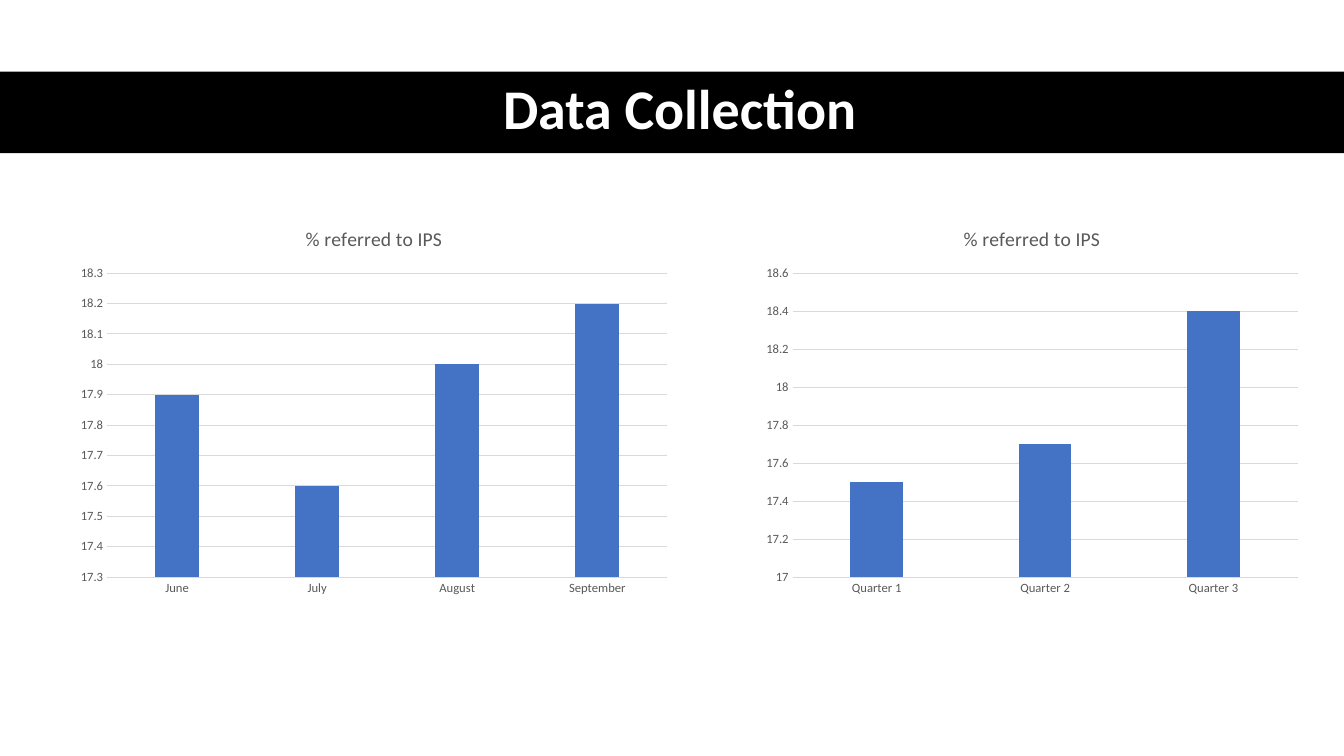
from dataclasses import dataclass

from pptx import Presentation
from pptx import util as u
from pptx.chart import data as cd
from pptx.dml.color import RGBColor
from pptx.enum import chart as ce
from pptx.enum import shapes, text

WIDTH, HEIGHT = u.Inches(13.33), u.Inches(7.5)
FONT = "Calibri"
LABEL = "% referred to IPS"
HEX = {"band": "000000", "head": "FFFFFF", "ink": "000000",
       "gray": "595959", "grid": "D9D9D9", "bar": "4472C4"}


@dataclass
class Box:
    """A place on the slide, in percent of its width and height."""
    left: float
    top: float
    width: float
    height: float

    def place(self) -> tuple[int, int, int, int]:
        return (int(WIDTH * self.left / 100), int(HEIGHT * self.top / 100),
                int(WIDTH * self.width / 100), int(HEIGHT * self.height / 100))


@dataclass
class Plot:
    box: Box
    cats: list[str]
    vals: list[float]
    low: float
    high: float
    step: float


BAND = Box(0, 9.47, 100, 10.8)
HEAD = Box(4.58, 9.33, 91.97, 10.8)
PLOTS = [
    Plot(Box(5.1, 27.6, 45.46, 52.27), ["June", "July", "August", "September"],
         [17.9, 17.6, 18, 18.2], 17.3, 18.3, 0.1),
    Plot(Box(56.19, 27.6, 41.19, 52.27), ["Quarter 1", "Quarter 2", "Quarter 3"],
         [17.5, 17.7, 18.4], 17, 18.6, 0.2),
]


def put(item, **values) -> None:
    for name, value in values.items():
        setattr(item, name, value)


def tint(key: str) -> RGBColor:
    return RGBColor.from_string(HEX[key])


def style(font, size: float, key: str, bold: bool = False) -> None:
    put(font, name=FONT, size=u.Pt(size), bold=bold)
    font.color.rgb = tint(key)


def fill(form, key: str) -> None:
    form.fill.solid()
    form.fill.fore_color.rgb = tint(key)


def rule(line) -> None:
    line.color.rgb = tint("grid")
    line.width = u.Pt(0.75)


def add_head(slide) -> None:
    """Format the title and lay the band behind it."""
    title = slide.shapes.title
    band = slide.shapes.add_shape(shapes.MSO_SHAPE.RECTANGLE, *BAND.place())
    band.shadow.inherit = False
    fill(band, "band")
    band.line.fill.background()
    title.element.addprevious(band.element)

    left, top, width, height = HEAD.place()
    put(title, left=left, top=top, width=width, height=height)
    frame = title.text_frame
    put(frame, text="Data Collection", word_wrap=True,
        vertical_anchor=text.MSO_ANCHOR.MIDDLE)
    para = frame.paragraphs[0]
    put(para, alignment=text.PP_ALIGN.CENTER, line_spacing=0.9)
    style(para.runs[0].font, 40, "head", True)


def add_plot(slide, plot: Plot) -> None:
    data = cd.CategoryChartData()
    data.categories = plot.cats
    data.add_series(LABEL, plot.vals)
    chart = slide.shapes.add_chart(
        ce.XL_CHART_TYPE.COLUMN_CLUSTERED, *plot.box.place(), data).chart
    style(chart.font, 10, "ink")
    put(chart, has_legend=False, has_title=True)
    chart.chart_title.include_in_layout = False
    name = chart.chart_title.text_frame
    name.text = LABEL
    style(name.paragraphs[0].runs[0].font, 14, "gray")

    bars = chart.plots[0]
    put(bars, gap_width=219, overlap=-27, vary_by_categories=False)
    fill(bars.series[0].format, "bar")

    cat, val = chart.category_axis, chart.value_axis
    for axis in (cat, val):
        put(axis, major_tick_mark=ce.XL_TICK_MARK.NONE,
            minor_tick_mark=ce.XL_TICK_MARK.NONE)
        style(axis.tick_labels.font, 9, "gray")
    rule(cat.format.line)
    put(val, minimum_scale=plot.low, maximum_scale=plot.high,
        major_unit=plot.step, has_major_gridlines=True)
    put(val.tick_labels, number_format="General", number_format_is_linked=False)
    val.format.line.fill.background()
    rule(val.major_gridlines.format.line)


def main() -> None:
    deck = Presentation()
    put(deck, slide_width=WIDTH, slide_height=HEIGHT)
    slide = deck.slides.add_slide(deck.slide_layouts.get_by_name("Title Only"))
    add_head(slide)
    for plot in PLOTS:
        add_plot(slide, plot)
    deck.save("out.pptx")


if __name__ == "__main__":
    main()
